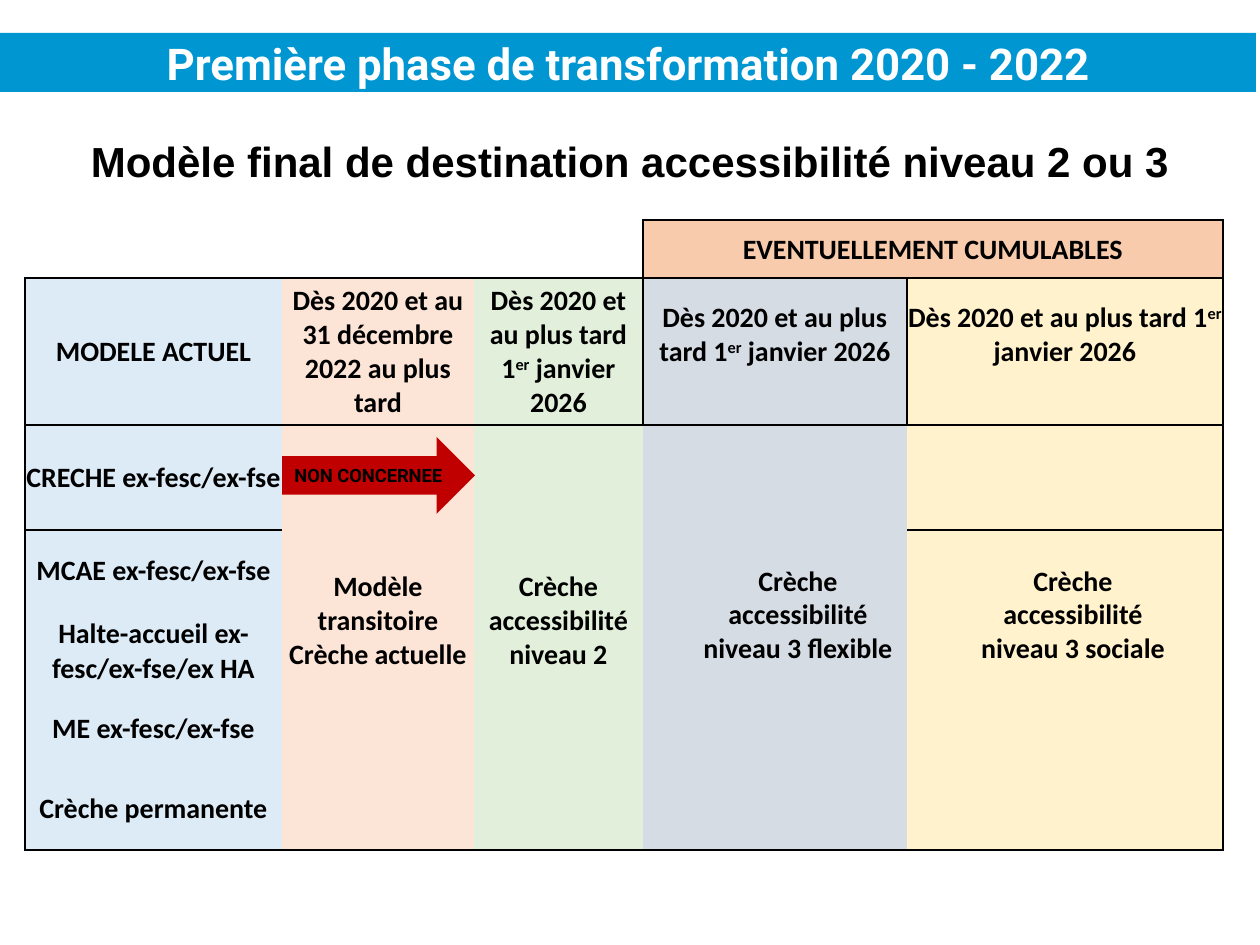
from lxml.etree import SubElement as Sub
from pptx import Presentation
from pptx.dml.color import RGBColor
from pptx.enum.shapes import MSO_SHAPE as Shape
from pptx.enum.text import MSO_ANCHOR as Anchor, PP_ALIGN as Align
from pptx.oxml.ns import qn
from pptx.util import Pt

PX = 914400 // 126
BLUE, ROSE, GREEN, GREY, GOLD = "DDEBF7", "FCE4D6", "E2EFDA", "D6DCE4", "FFF2CC"
TITLE = "Première phase de transformation 2020 - 2022"
HEAD = "Modèle final de destination accessibilité niveau 2 ou 3"
DATE = "Dès 2020 et au plus tard 1^er^ janvier 2026"
COLS = [257, 192, 169, 264, 316]
ROWS = [58, 147, 105, 82, 78, 78, 82]

# row, column, row span, column span, fill, borders, text, bottom inset
CELLS = [
    (0, 0, 1, 1, None, "B", "", 0),
    (0, 1, 1, 1, None, "B", "", 0),
    (0, 2, 1, 1, None, "RB", "", 0),
    (0, 3, 1, 2, "F8CBAD", "LRTB", "EVENTUELLEMENT CUMULABLES", 0),
    (1, 0, 1, 1, BLUE, "LTB", "MODELE ACTUEL", 0),
    (1, 1, 1, 1, ROSE, "TB", "Dès 2020 et au 31 décembre 2022 au plus tard", 0),
    (1, 2, 1, 1, GREEN, "RTB", DATE, 0),
    (1, 3, 1, 1, GREY, "LRTB", DATE, 34),
    (1, 4, 1, 1, GOLD, "LRTB", DATE, 34),
    (2, 0, 1, 1, BLUE, "LT", "CRECHE ex-fesc/ex-fse", 0),
    (3, 0, 1, 1, BLUE, "L", "MCAE ex-fesc/ex-fse", 0),
    (4, 0, 1, 1, BLUE, "L", "Halte-accueil ex-fesc/ex-fse/ex HA", 0),
    (5, 0, 1, 1, BLUE, "L", "ME ex-fesc/ex-fse", 0),
    (6, 0, 1, 1, BLUE, "LB", "Crèche permanente", 0),
    (2, 1, 5, 1, ROSE, "TB", "Modèle transitoire Crèche actuelle", 34),
    (2, 2, 5, 1, GREEN, "TB", "Crèche accessibilité niveau 2", 34),
    (2, 3, 5, 1, GREY, "TB", "", 0),
    (2, 4, 1, 1, GOLD, "RT", "", 0),
    (3, 4, 1, 1, GOLD, "R", "", 0),
    (4, 4, 1, 1, GOLD, "R", "", 0),
    (5, 4, 1, 1, GOLD, "R", "", 0),
    (6, 4, 1, 1, GOLD, "RB", "", 0),
]
NOTES = [
    (0, 129, 1260, 63, HEAD, 24, "Arial"),
    (674, 557, 248, 152, "Crèche accessibilité niveau 3 flexible", 16, "Calibri"),
    (949, 557, 248, 152, "Crèche accessibilité niveau 3 sociale", 16, "Calibri"),
]
SHAPES = [
    (Shape.RECTANGLE, 0, 33, 1256, 59, "0096D2", TITLE, 25, "FFFFFF", Align.CENTER),
    (Shape.RIGHT_ARROW, 282, 437, 193, 77, "C00000", "NON CONCERNEE", 10.5, "000000", Align.LEFT),
]


def rgb(code):
    """Turn a hex string into a colour."""
    return RGBColor.from_string(code)


def write(frame, text, size, face, color="000000", align=Align.CENTER):
    """Write bold text, with superscripts between carets."""
    para = frame.paragraphs[0]
    para.alignment = align
    for i, part in enumerate(text.split("^")):
        run = para.add_run()
        run.text = part
        font = run.font
        font.size, font.name, font.bold = Pt(size), face, True
        font.color.rgb = rgb(color)
        if i % 2:
            run._r.get_or_add_rPr().set("baseline", "30000")


def edge(cell, sides):
    """Draw one-point black borders on the given sides."""
    props = cell._tc.get_or_add_tcPr()
    for side in sides:
        line = Sub(props, qn("a:ln" + side), w=str(Pt(1)))
        fill = Sub(line, qn("a:solidFill"))
        Sub(fill, qn("a:srgbClr"), val="000000")


def grid(slide):
    """Build the table of models."""
    box = [n * PX for n in (25, 220, sum(COLS), sum(ROWS))]
    table = slide.shapes.add_table(len(ROWS), len(COLS), *box).table
    table.first_row = table.horz_banding = False
    style = table._tbl.tblPr.find(qn("a:tableStyleId"))
    style.text = "{2D5ABB26-0587-4C30-8999-92F81FD0307C}"
    for col, wide in zip(table.columns, COLS):
        col.width = wide * PX
    for row, high in zip(table.rows, ROWS):
        row.height = high * PX
    for r, c, down, over, fill, sides, text, low in CELLS:
        cell = table.cell(r, c)
        if down * over > 1:
            cell.merge(table.cell(r + down - 1, c + over - 1))
        edge(cell, sides)
        if fill:
            cell.fill.solid()
            cell.fill.fore_color.rgb = rgb(fill)
        else:
            cell.fill.background()
        cell.vertical_anchor = Anchor.MIDDLE
        cell.margin_left = cell.margin_right = cell.margin_top = PX
        cell.margin_bottom = low * PX
        if text:
            write(cell.text_frame, text, 16, "Calibri")


def main():
    """Build and save the slide."""
    deck = Presentation()
    deck.slide_width, deck.slide_height = 1260 * PX, 945 * PX
    slide = deck.slides.add_slide(deck.slide_layouts[6])
    grid(slide)
    for *box, text, size, face in NOTES:
        frame = slide.shapes.add_textbox(*[n * PX for n in box]).text_frame
        frame.word_wrap = True
        write(frame, text, size, face)
    for kind, x, y, w, h, fill, text, size, color, align in SHAPES:
        shape = slide.shapes.add_shape(kind, x * PX, y * PX, w * PX, h * PX)
        shape.shadow.inherit = False
        shape.fill.solid()
        shape.fill.fore_color.rgb = rgb(fill)
        shape.line.fill.background()
        frame = shape.text_frame
        frame.vertical_anchor = Anchor.MIDDLE
        frame.margin_right = frame.margin_left if align == Align.CENTER else 0
        write(frame, text, size, "Roboto", color, align)
    deck.save("out.pptx")


if __name__ == "__main__":
    main()
